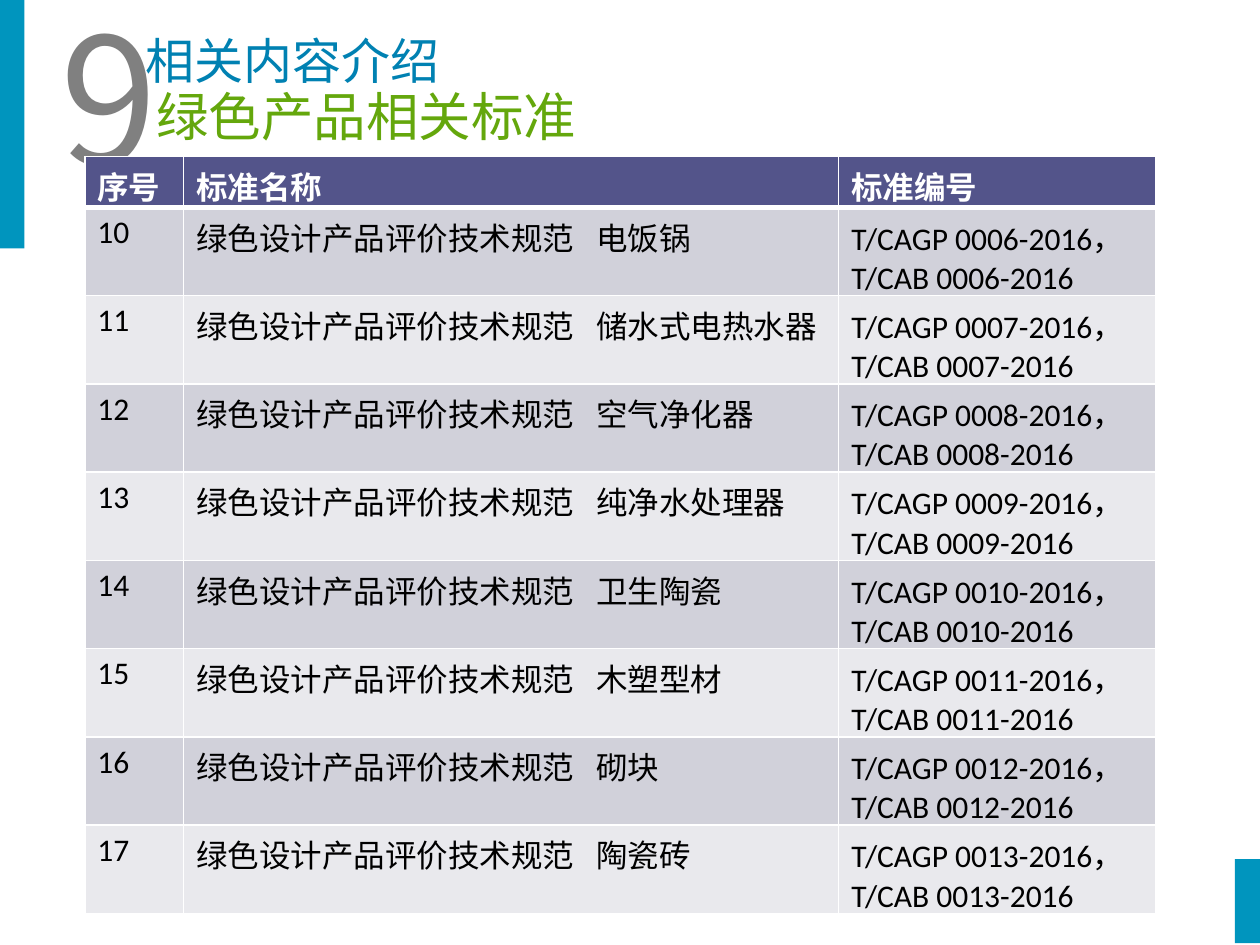
from lxml.etree import SubElement
from pptx import Presentation
from pptx.dml.color import RGBColor
from pptx.enum.shapes import MSO_SHAPE
from pptx.enum.text import MSO_ANCHOR, PP_ALIGN
from pptx.oxml.ns import qn
from pptx.util import Pt

COLORS = {
    "bar": "0095BE", "number": "808080", "title": "0081B2", "subtitle": "64A70C",
    "header": "53548A", "odd": "D1D1DA", "even": "E9E9ED",
    "white": "FFFFFF", "black": "000000",
}
CJK = "Noto Sans CJK SC"
PRODUCTS = ["电饭锅", "储水式电热水器", "空气净化器", "纯净水处理器",
            "卫生陶瓷", "木塑型材", "砌块", "陶瓷砖"]


class Deck:
    def __init__(self, s, font="Calibri", size=18, tab=228.5):
        self.s, self.font, self.size, self.tab = s, font, size, tab

    def color(self, name):
        return RGBColor.from_string(COLORS[name])

    def style(self, p, size, color, font=None, bold=False):
        for r in p.runs:
            r.font.size = Pt(size)
            r.font.name = font or self.font
            r.font.bold = bold
            r.font.color.rgb = self.color(color)

    def bar(self, x, y, w, h):
        sp = self.s.shapes.add_shape(MSO_SHAPE.RECTANGLE, Pt(x), Pt(y), Pt(w), Pt(h))
        sp.shadow.inherit = False
        sp.fill.solid()
        sp.fill.fore_color.rgb = self.color("bar")
        sp.line.fill.background()

    def text(self, x, y, w, h, text, size, color, font=None, align=PP_ALIGN.LEFT, flush=False):
        tf = self.s.shapes.add_textbox(Pt(x), Pt(y), Pt(w), Pt(h)).text_frame
        tf.word_wrap = True
        if flush:
            tf.vertical_anchor = MSO_ANCHOR.MIDDLE
            tf.margin_left = tf.margin_right = tf.margin_top = tf.margin_bottom = 0
        tf.text = text
        p = tf.paragraphs[0]
        p.alignment = align
        self.style(p, size, color, font)

    def borders(self, cell, top, bottom):
        tcPr = cell._tc.get_or_add_tcPr()
        for side, width in (("L", 1), ("R", 1), ("T", top), ("B", bottom)):
            ln = SubElement(tcPr, qn(f"a:ln{side}"), w=str(Pt(width)))
            fill = SubElement(ln, qn("a:solidFill"))
            SubElement(fill, qn("a:srgbClr"), val=COLORS["white"])

    def cell(self, cell, text, row):
        header = row == 0
        cell.text = text
        p = cell.text_frame.paragraphs[0]
        if "\t" in text:
            tabs = SubElement(p._p.get_or_add_pPr(), qn("a:tabLst"))
            SubElement(tabs, qn("a:tab"), pos=str(Pt(self.tab)), algn="l")
        self.style(p, self.size, "white" if header else "black", bold=header)
        self.borders(cell, 3 if row == 1 else 1, 3 if header else 1)
        cell.fill.solid()
        cell.fill.fore_color.rgb = self.color("header" if header else "odd" if row % 2 else "even")

    def table(self, x, y, widths, header_height, row_height, rows):
        height = header_height + row_height * (len(rows) - 1)
        table = self.s.shapes.add_table(len(rows), len(widths), Pt(x), Pt(y),
                                        Pt(sum(widths)), Pt(height)).table
        for column, width in zip(table.columns, widths):
            column.width = Pt(width)
        for i, values in enumerate(rows):
            table.rows[i].height = Pt(row_height if i else header_height)
            for j, value in enumerate(values):
                self.cell(table.cell(i, j), value, i)


def main():
    prs = Presentation()
    prs.slide_width, prs.slide_height = Pt(720), Pt(540)
    deck = Deck(prs.slides.add_slide(prs.slide_layouts[6]))

    deck.bar(705.6, 491, 14.4, 48)
    deck.bar(-5, -8, 19, 150)
    deck.text(27.4, -9.4, 37.4, 127.4, "9", 100, "number", CJK)
    deck.text(89.3, 48.2, 243.4, 36, "绿色产品相关标准", 30, "subtitle", CJK,
              PP_ALIGN.JUSTIFY, flush=True)

    rows = [("序号", "标准名称", "标准编号")]
    for i, product in enumerate(PRODUCTS):
        code = f"{i + 6:04d}-2016"
        rows.append((str(i + 10), f"绿色设计产品评价技术规范\t{product}",
                     f"T/CAGP {code}，T/CAB {code}"))
    deck.table(48.5, 89.3, (56.4, 374.4, 181.2), 29.2, 50.4, rows)

    deck.text(76.3, 13.7, 221.8, 41, "相关内容介绍", 28, "title", align=PP_ALIGN.JUSTIFY)
    prs.save("out.pptx")


if __name__ == "__main__":
    main()
